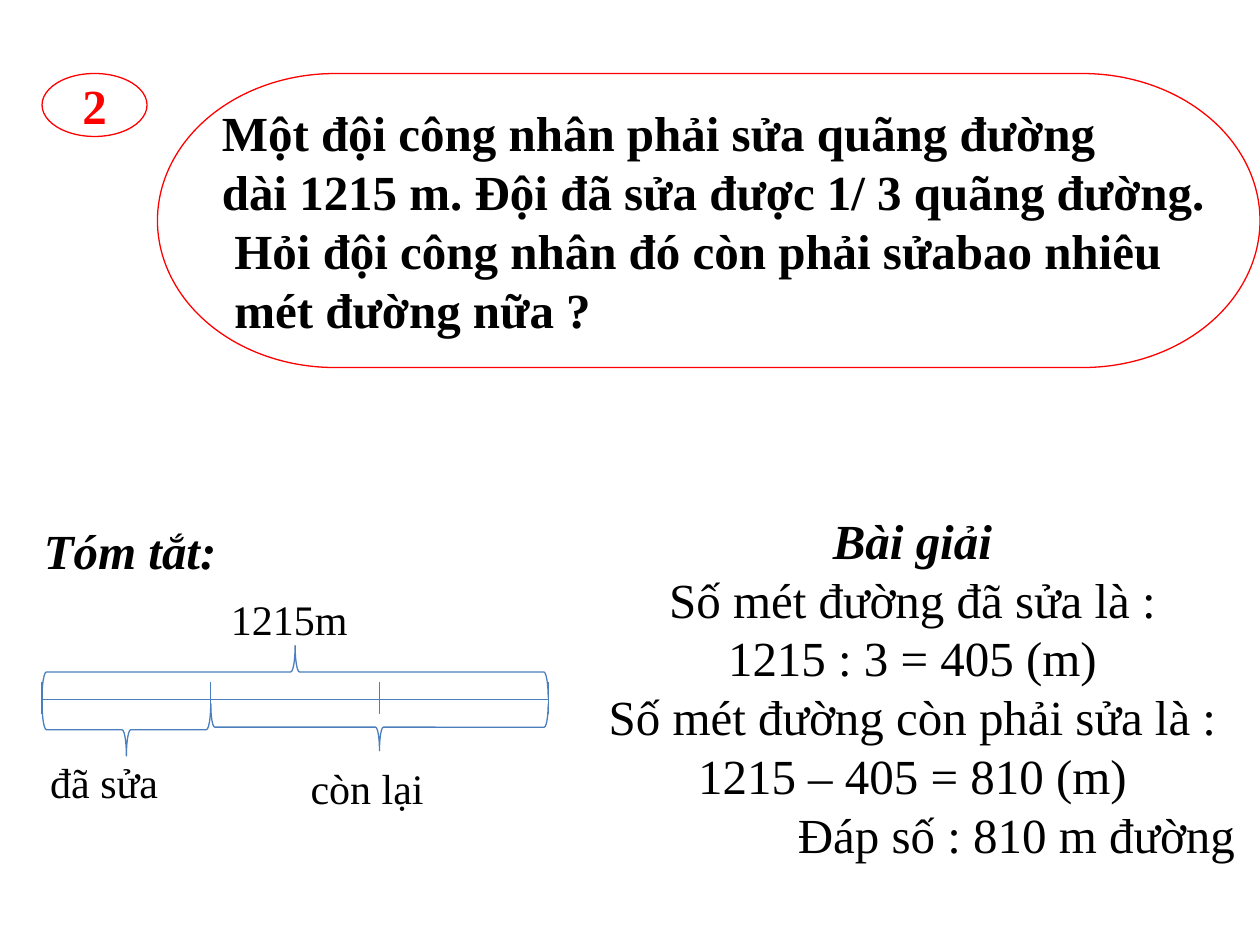
from pptx import Presentation
from pptx.dml.color import RGBColor
from pptx.enum.shapes import MSO_CONNECTOR, MSO_SHAPE
from pptx.enum.text import MSO_ANCHOR, PP_ALIGN
from pptx.oxml.ns import qn
from pptx.util import Inches, Pt
from lxml import etree

COLS, ROWS = 120, 90  # square grid cells, 12 to the inch


def rgb(hex_color):
    return RGBColor.from_string(hex_color)


def write(tf, text, *, size=28, color="000000", bold=False, italic=False,
          align=PP_ALIGN.LEFT, indent=0, font="Times New Roman"):
    """Add one paragraph; the first call fills the empty one."""
    p = tf.paragraphs[0] if not tf.paragraphs[0].runs else tf.add_paragraph()
    p.alignment = align
    if indent:
        p._p.get_or_add_pPr().set("marL", str(Inches(indent)))
    r = p.add_run()
    r.text = text
    r.font.name, r.font.size = font, Pt(size)
    r.font.bold, r.font.italic = bold, italic
    r.font.color.rgb = rgb(color)


class Board:
    RED, BLUE, WHITE = "FF0000", "4B7EBC", "FFFFFF"
    LINE = Pt(0.75)

    def __init__(self, prs):
        self.s = prs.slides.add_slide(prs.slide_layouts[6])
        self.cell = prs.slide_width / COLS

    def grid(self, *cells):
        return [round(c * self.cell) for c in cells]

    def shape(self, kind, x, y, w, h, line, fill=None):
        sp = self.s.shapes.add_shape(kind, *self.grid(x, y, w, h))
        sp.shadow.inherit = False
        if fill:
            sp.fill.solid()
            sp.fill.fore_color.rgb = rgb(fill)
        else:
            sp.fill.background()
        sp.line.color.rgb, sp.line.width = rgb(line), self.LINE
        return sp

    def frame(self, kind, x, y, w, h):
        tf = self.shape(kind, x, y, w, h, self.RED, self.WHITE).text_frame
        tf.word_wrap = False
        tf.vertical_anchor = MSO_ANCHOR.MIDDLE
        return tf

    def text(self, x, y, w, h):
        tf = self.s.shapes.add_textbox(*self.grid(x, y, w, h)).text_frame
        tf.word_wrap = True
        return tf

    def line(self, x1, y1, x2, y2):
        c = self.s.shapes.add_connector(MSO_CONNECTOR.STRAIGHT, *self.grid(x1, y1, x2, y2))
        c.line.color.rgb, c.line.width = rgb(self.BLUE), self.LINE
        etree.SubElement(c._element.spPr, qn("a:effectLst"))

    def brace(self, kind, x, y, w, h):
        """Lay a brace flat so that it covers x, y, w, h after a quarter turn."""
        sp = self.shape(kind, x + (w - h) / 2, y + (h - w) / 2, h, w, self.BLUE)
        sp.rotation = 90


def main():
    prs = Presentation()
    prs.slide_width, prs.slide_height = Inches(10), Inches(7.5)
    board = Board(prs)

    # Problem and its number
    tf = board.frame(MSO_SHAPE.FLOWCHART_TERMINATOR, 15, 7, 105, 28)
    for text, indent in (("Một đội công nhân phải sửa quãng đường", 0),
                         ("dài 1215 m. Đội đã sửa được 1/ 3 quãng đường.", 0),
                         ("Hỏi đội công nhân đó còn phải sửabao nhiêu", 0.1),
                         ("mét đường nữa ?", 0.1)):
        write(tf, text, bold=True, indent=indent)
    tf = board.frame(MSO_SHAPE.OVAL, 4, 7, 10, 6)
    write(tf, "2", bold=True, color=board.RED, align=PP_ALIGN.CENTER)

    # Solution
    tf = board.text(49, 48, 75.8, 35.2)
    write(tf, "Bài giải", bold=True, italic=True, align=PP_ALIGN.CENTER)
    for text in ("Số mét đường đã sửa là :", "1215 : 3 = 405 (m)",
                 "Số mét đường còn phải sửa là :", "1215 – 405 = 810 (m)"):
        write(tf, text, align=PP_ALIGN.CENTER)
    write(tf, "Đáp số : 810 m đường", align=PP_ALIGN.CENTER, indent=1.65)

    # Summary heading
    write(board.text(3, 49, 36, 6.8), "Tóm tắt:", bold=True, italic=True)

    # Road in three equal parts
    start, part, parts, axis = 4, 16.07, 3, 66.6
    for i in range(parts + 1):
        x = start + i * part
        board.line(x, 65, x, 68)
    board.line(start, axis, start + parts * part, axis)

    # Braces: whole road above, repaired and remaining parts below
    board.brace(MSO_SHAPE.LEFT_BRACE, start, 61.5, parts * part, 5)
    board.brace(MSO_SHAPE.RIGHT_BRACE, start, 67, part, 5)
    board.brace(MSO_SHAPE.RIGHT_BRACE, start + part, 67, 2 * part, 4.5)

    # Brace labels
    for text, x, y in (("1215m", 20.8, 55.9), ("đã sửa", 3.6, 71.5), ("còn lại", 28.4, 72)):
        write(board.text(x, y, 16.2, 6), text, size=24)

    prs.save("out.pptx")


if __name__ == "__main__":
    main()
